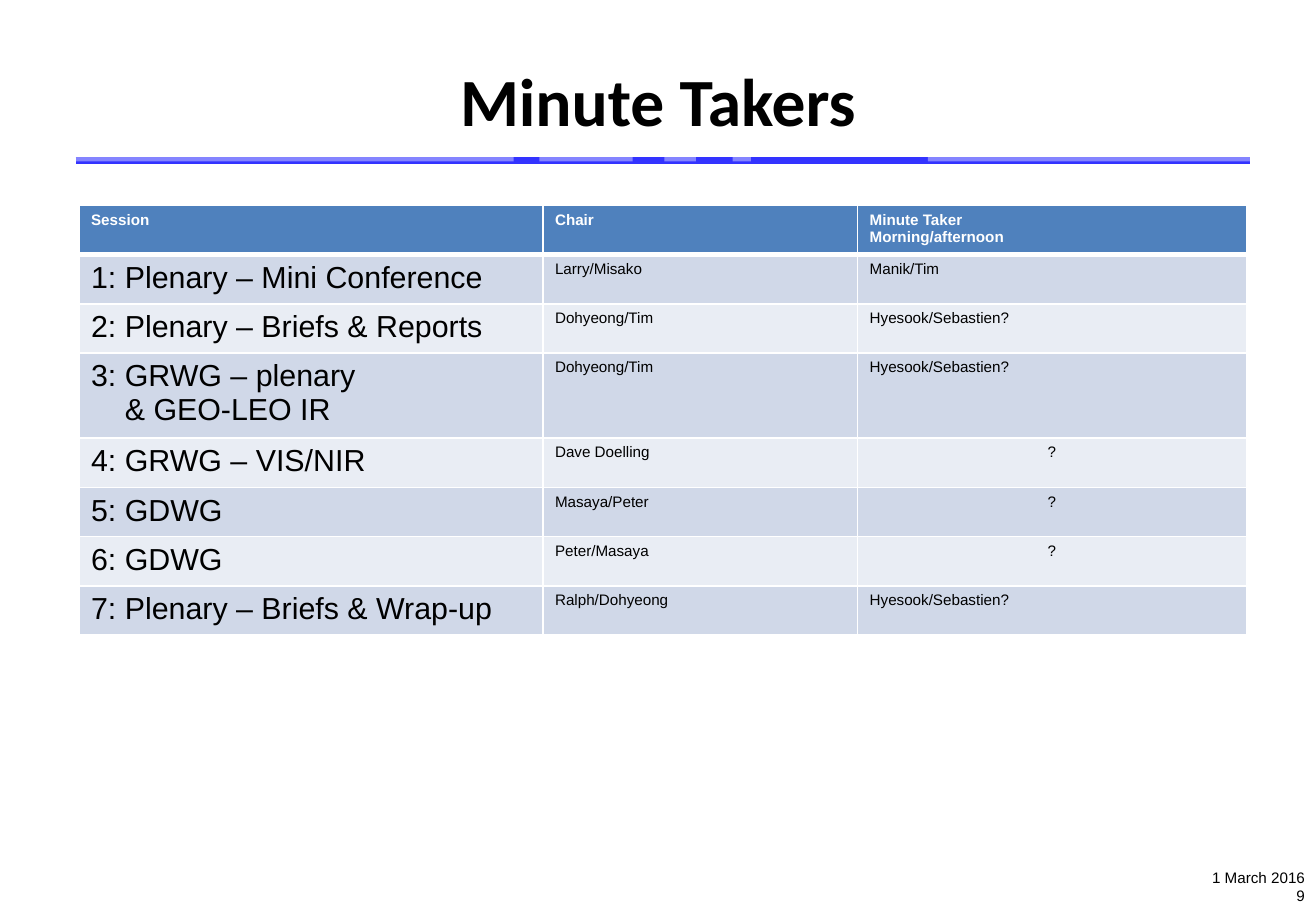
"""Build the Minute Takers slide: title, segmented rule, session table and footer."""
from lxml import etree
from pptx import Presentation, util as u
from pptx.dml.color import RGBColor
from pptx.enum import shapes, text
from pptx.oxml.ns import qn

Pt = u.Pt
TITLE = "Minute Takers"
FOOTER = ["1 March 2016", "9"]
HEADER = ["Session", "Chair", "Minute Taker\nMorning/afternoon"]
SESSIONS = [
    ("1: Plenary – Mini Conference", "Larry/Misako", "Manik/Tim"),
    ("2: Plenary – Briefs & Reports", "Dohyeong/Tim", "Hyesook/Sebastien?"),
    ("3: GRWG – plenary\n& GEO-LEO IR", "Dohyeong/Tim", "Hyesook/Sebastien?"),
    ("4: GRWG – VIS/NIR", "Dave Doelling", "?"),
    ("5: GDWG", "Masaya/Peter", "?"),
    ("6: GDWG", "Peter/Masaya", "?"),
    ("7: Plenary – Briefs & Wrap-up", "Ralph/Dohyeong", "Hyesook/Sebastien?"),
]

BLACK = RGBColor(0, 0, 0)
WHITE = RGBColor(0xFF, 0xFF, 0xFF)
RULE_BLUE = RGBColor(0x33, 0x33, 0xFF)
HEADER_BLUE = RGBColor(0x4F, 0x81, 0xBD)
BANDS = [RGBColor(0xE9, 0xED, 0xF4), RGBColor(0xD0, 0xD8, 0xE8)]

SLIDE_SIZE = (780, 540)
TITLE_BOX = (38.9, 21.6, 702, 74.9)
FOOTER_BOX = (286.6, 511.2, 493.9, 28.8)
RULE_LEFT, RULE_RIGHT, RULE_Y = 44.8, 741, 95.2
VEILS = [(0.5, 304), (319.7, 55.4), (393.8, 18.7), (434.2, 10.8), (550, 230)]
VEIL_TOP, VEIL_HEIGHT, VEIL_OPACITY = 85.7, 10.1, 40
TABLE_LEFT, TABLE_TOP = 46.8, 121.7
COLUMNS = [275, 186.5, 230.4]
ROW_HEIGHT, EXTRA_LINE, HANGING = 29.2, 21.2, 20

TITLE_FORMAT = {"name": "Calibri", "size": Pt(40), "bold": True}
SMALL_FORMAT = {"name": "Arial", "size": Pt(9), "bold": False}
SESSION_FORMAT = {**SMALL_FORMAT, "size": Pt(18)}
HEADER_FORMAT = {**SMALL_FORMAT, "bold": True}


def write(frame, lines, font_format, color, align):
    for index, line in enumerate(lines):
        paragraph = frame.paragraphs[0] if index == 0 else frame.add_paragraph()
        paragraph.alignment = align
        run = paragraph.add_run()
        run.text = line
        for key, value in font_format.items():
            setattr(run.font, key, value)
        run.font.color.rgb = color


def add_text(slide, box, lines, font_format, align, anchor):
    frame = slide.shapes.add_textbox(*map(Pt, box)).text_frame
    frame.word_wrap = True
    frame.vertical_anchor = anchor
    write(frame, lines, font_format, BLACK, align)


def add_rule(slide):
    rule = slide.shapes.add_connector(
        shapes.MSO_CONNECTOR.STRAIGHT, Pt(RULE_LEFT), Pt(RULE_Y), Pt(RULE_RIGHT), Pt(RULE_Y))
    rule.line.color.rgb = RULE_BLUE
    rule.line.width = Pt(4.5)
    etree.SubElement(rule._element.spPr, qn("a:effectLst"))
    for left, width in VEILS:
        veil = slide.shapes.add_shape(
            shapes.MSO_SHAPE.RECTANGLE, Pt(left), Pt(VEIL_TOP), Pt(width), Pt(VEIL_HEIGHT))
        veil.shadow.inherit = False
        veil.line.fill.background()
        veil.fill.solid()
        veil.fill.fore_color.rgb = WHITE
        tint = veil._element.spPr.find(".//" + qn("a:srgbClr"))
        etree.SubElement(tint, qn("a:alpha"), val=str(VEIL_OPACITY * 1000))


def set_borders(cell, top, bottom):
    properties = cell._tc.get_or_add_tcPr()
    for side, width in (("L", 1), ("R", 1), ("T", top), ("B", bottom)):
        border = etree.SubElement(properties, qn("a:ln" + side), w=str(Pt(width)))
        fill = etree.SubElement(border, qn("a:solidFill"))
        etree.SubElement(fill, qn("a:srgbClr"), val=str(WHITE))


def add_sessions(slide):
    rows = [HEADER, *SESSIONS]
    heights = [ROW_HEIGHT] + [ROW_HEIGHT + EXTRA_LINE * row[0].count("\n") for row in SESSIONS]
    table = slide.shapes.add_table(
        len(rows), len(COLUMNS), Pt(TABLE_LEFT), Pt(TABLE_TOP),
        Pt(sum(COLUMNS)), Pt(sum(heights))).table
    for column, width in zip(table.columns, COLUMNS):
        column.width = Pt(width)
    for r, (row, height) in enumerate(zip(rows, heights)):
        table.rows[r].height = Pt(height)
        for c, entry in enumerate(row):
            cell = table.cell(r, c)
            set_borders(cell, 3 if r == 1 else 1, 3 if r == 0 else 1)
            cell.fill.solid()
            cell.fill.fore_color.rgb = BANDS[r % 2] if r else HEADER_BLUE
            body_format = SMALL_FORMAT if c else SESSION_FORMAT
            align = text.PP_ALIGN.CENTER if entry == "?" else text.PP_ALIGN.LEFT
            write(cell.text_frame, entry.split("\n"), body_format if r else HEADER_FORMAT,
                  BLACK if r else WHITE, align)
            if r and c == 0:
                for continuation in cell.text_frame.paragraphs[1:]:
                    continuation._p.get_or_add_pPr().set("marL", str(Pt(HANGING)))


def main():
    deck = Presentation()
    deck.slide_width, deck.slide_height = map(Pt, SLIDE_SIZE)
    slide = deck.slides.add_slide(deck.slide_layouts[6])
    add_text(slide, FOOTER_BOX, FOOTER, SMALL_FORMAT, text.PP_ALIGN.RIGHT, text.MSO_ANCHOR.TOP)
    add_rule(slide)
    add_text(slide, TITLE_BOX, [TITLE], TITLE_FORMAT, text.PP_ALIGN.CENTER, text.MSO_ANCHOR.MIDDLE)
    add_sessions(slide)
    deck.save("out.pptx")


if __name__ == "__main__":
    main()
